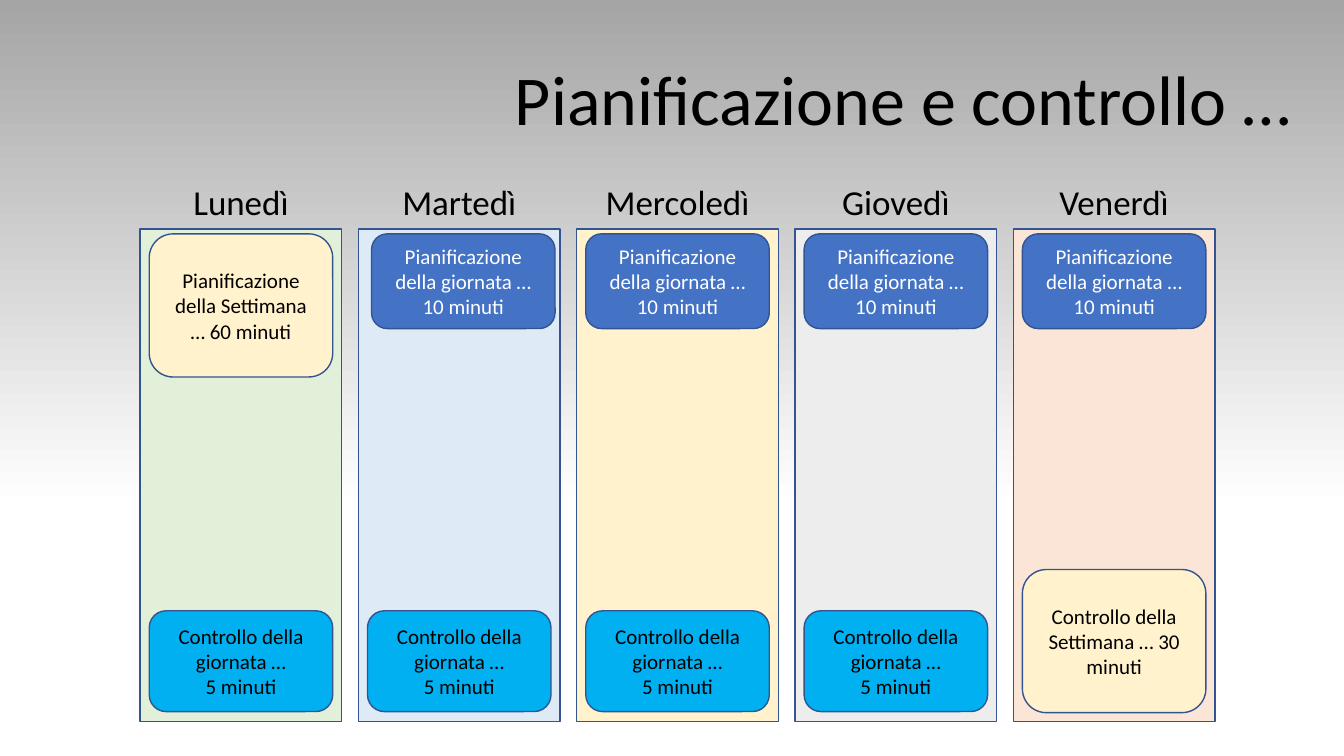
from pptx import Presentation
from pptx.dml.color import RGBColor
from pptx.enum import shapes, text
from pptx.util import Inches, Pt


def color(value):
    return RGBColor.from_string(value)


def write(shape, lines, size, value, align, anchor, wrap):
    frame = shape.text_frame
    frame.text = "\n".join(lines)
    frame_format = {"word_wrap": wrap, "vertical_anchor": anchor,
                    "auto_size": text.MSO_AUTO_SIZE.NONE}
    for name, setting in frame_format.items():
        setattr(frame, name, setting)
    for paragraph in frame.paragraphs:
        paragraph.alignment = align
        for name, setting in {"name": "Calibri", "size": Pt(size)}.items():
            setattr(paragraph.font, name, setting)
        paragraph.font.color.rgb = color(value)


CENTER, RIGHT = text.PP_ALIGN.CENTER, text.PP_ALIGN.RIGHT
TOP, MIDDLE = text.MSO_ANCHOR.TOP, text.MSO_ANCHOR.MIDDLE
RECTANGLE = shapes.MSO_SHAPE.RECTANGLE
ROUNDED = shapes.MSO_SHAPE.ROUNDED_RECTANGLE

presentation = Presentation()
presentation.slide_width = Inches(13.33)
presentation.slide_height = Inches(7.5)
slide = presentation.slides.add_slide(presentation.slide_layouts[5])

# Background: white at the bottom, grey at the top
background = slide.background.fill
background.gradient()
background.gradient_angle = 90
for stop, position, value in zip(background.gradient_stops, (0.33, 1), ("FFFFFF", "A5A5A5")):
    stop.position = position
    stop.color.rgb = color(value)

# Title
title = slide.shapes.title
title_box = {"left": 4.89, "top": 0.5, "width": 8.02, "height": 0.94}
for name, inches in title_box.items():
    setattr(title, name, Inches(inches))
write(title, ["Pianificazione e controllo …"], 50, "000000", RIGHT, TOP, False)

# Week layout: day, label width, column fill
days = [
    ("Lunedì", 1.16, "E2F0D9"),
    ("Martedì", 1.35, "DEEBF7"),
    ("Mercoledì", 1.65, "FFF2CC"),
    ("Giovedì", 1.28, "EDEDED"),
    ("Venerdì", 1.3, "FBE5D6"),
]
first_left, last_left, column_width = 1.39, 10.05, 2
step = (last_left - first_left) / (len(days) - 1)
card_width = 1.82
card_inset = (column_width - card_width) / 2

# Cards: top, height, fill, text colour, lines
plan_day = (2.32, 0.94, "4472C4", "FFFFFF", ["Pianificazione della giornata … 10 minuti"])
plan_week = (2.32, 1.42, "FFF2CC", "000000", ["Pianificazione della Settimana … 60 minuti"])
check_day = (6.06, 1, "00B0F0", "000000", ["Controllo della giornata …", "5 minuti"])
check_week = (5.65, 1.42, "FFF2CC", "000000", ["Controllo della Settimana … 30 minuti"])

for index, (day, label_width, column_fill) in enumerate(days):
    left = first_left + index * step

    # Day label, centred over its column
    label_left = left + (column_width - label_width) / 2
    label = slide.shapes.add_textbox(
        Inches(label_left), Inches(1.74), Inches(label_width), Inches(0.52))
    write(label, [day], 25, "000000", CENTER, TOP, False)

    # Column with its planning and control cards
    plan = plan_week if day == "Lunedì" else plan_day
    check = check_week if day == "Venerdì" else check_day
    card_left = left + card_inset
    plan_left = card_left + (0.04 if day == "Martedì" else 0)
    blocks = [
        (RECTANGLE, left, column_width, (2.27, 4.89, column_fill, "000000", [])),
        (ROUNDED, plan_left, card_width, plan),
        (ROUNDED, card_left, card_width, check),
    ]
    for kind, x, width, (top, height, fill, text_color, lines) in blocks:
        shape = slide.shapes.add_shape(
            kind, Inches(x), Inches(top), Inches(width), Inches(height))
        shape.shadow.inherit = False
        shape.fill.solid()
        shape.fill.fore_color.rgb = color(fill)
        shape.line.color.rgb = color("325491")
        shape.line.width = Pt(1)
        if lines:
            write(shape, lines, 15, text_color, CENTER, MIDDLE, True)

presentation.save("out.pptx")
